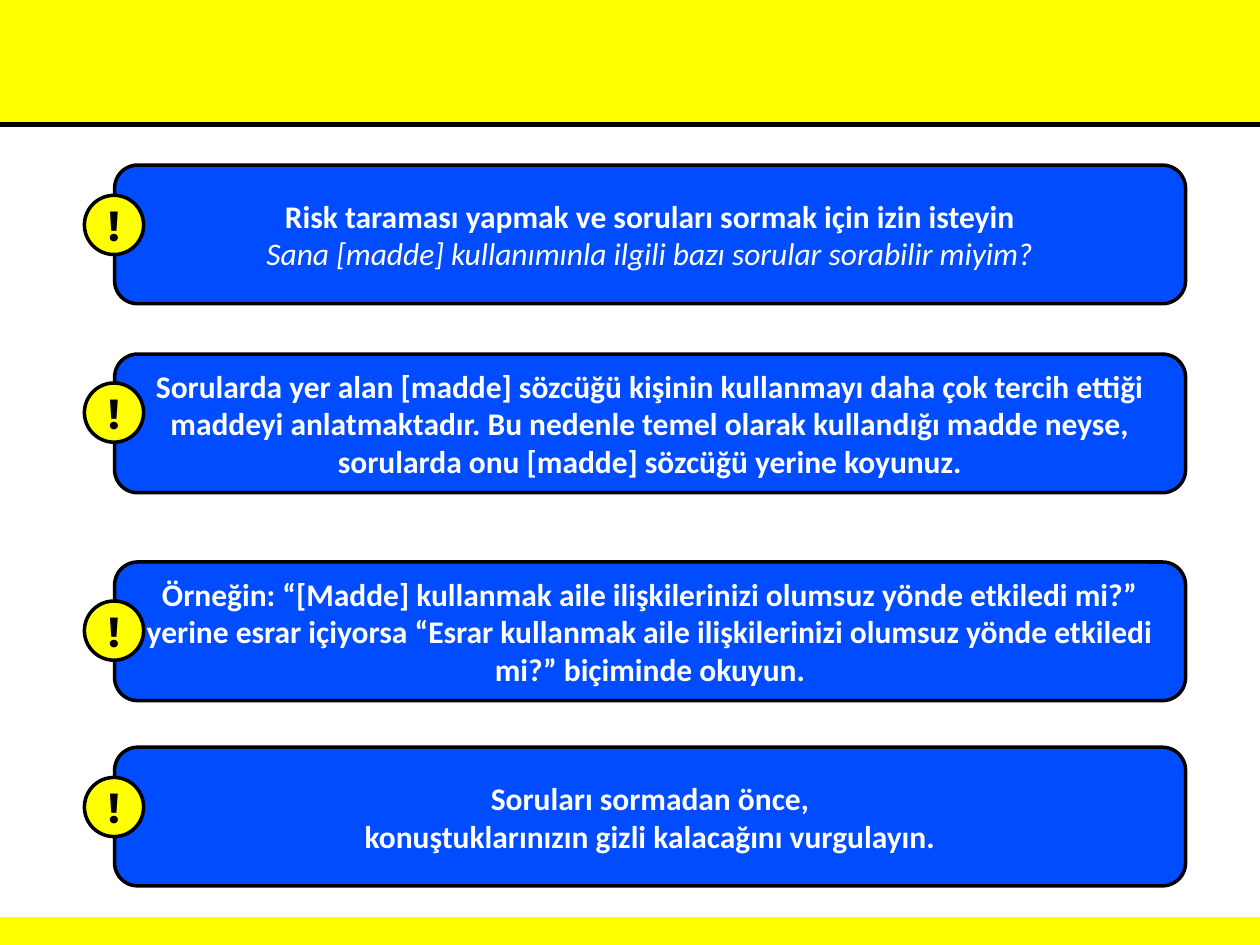
from dataclasses import dataclass

from lxml.etree import SubElement
from pptx import Presentation
from pptx.dml.color import RGBColor
from pptx.enum.shapes import MSO_CONNECTOR, MSO_SHAPE
from pptx.enum.text import MSO_ANCHOR, PP_ALIGN
from pptx.oxml.ns import qn
from pptx.shapes.autoshape import Shape
from pptx.slide import Slide
from pptx.util import Inches, Pt

WIDTH, HEIGHT = Inches(10), Inches(7.5)
COLORS = {"yellow": "FFFF00", "blue": "014CFF", "black": "000000", "white": "FFFFFF"}


@dataclass(frozen=True)
class Box:
    left: float
    top: float
    width: float
    height: float


@dataclass(frozen=True)
class Line:
    text: str
    bold: bool = True
    italic: bool = False


@dataclass(frozen=True)
class TextStyle:
    font: str
    size: int
    color: str


@dataclass(frozen=True)
class Card:
    top: float
    badge_top: float
    lines: tuple[Line, ...]


CARD_STYLE = TextStyle("Calibri", 18, "white")
BADGE_STYLE = TextStyle("Montserrat", 24, "black")
BANDS = (Box(0, 0, 100, 13.2), Box(0, 97.2, 100, 2.8))
CARDS = (
    Card(17.47, 20.67, (
        Line("Risk taraması yapmak ve soruları sormak için izin isteyin"),
        Line("Sana [madde] kullanımınla ilgili bazı sorular sorabilir miyim?", False, True),
    )),
    Card(37.47, 40.53, (
        Line("Sorularda yer alan [madde] sözcüğü kişinin kullanmayı daha çok tercih ettiği "
             "maddeyi anlatmaktadır. Bu nedenle temel olarak kullandığı madde neyse, "
             "sorularda onu [madde] sözcüğü yerine koyunuz."),
    )),
    Card(59.47, 63.6, (
        Line("Örneğin: “[Madde] kullanmak aile ilişkilerinizi olumsuz yönde etkiledi mi?” "
             "yerine esrar içiyorsa “Esrar kullanmak aile ilişkilerinizi olumsuz yönde "
             "etkiledi mi?” biçiminde okuyun."),
    )),
    Card(79.07, 82.27, (
        Line("Soruları sormadan önce,"),
        Line("konuştuklarınızın gizli kalacağını vurgulayın."),
    )),
)


def rgb(name: str) -> RGBColor:
    """Return the named colour."""
    return RGBColor.from_string(COLORS[name])


def across(percent: float) -> int:
    """Return a share of the slide width."""
    return round(WIDTH * percent / 100)


def down(percent: float) -> int:
    """Return a share of the slide height."""
    return round(HEIGHT * percent / 100)


def add_box(s: Slide, kind: MSO_SHAPE, box: Box, fill: str, line: str) -> Shape:
    """Draw a filled and outlined shape."""
    sp = s.shapes.add_shape(
        kind, across(box.left), down(box.top), across(box.width), down(box.height)
    )
    sp.shadow.inherit = False
    sp.fill.solid()
    sp.fill.fore_color.rgb = rgb(fill)
    sp.line.color.rgb = rgb(line)
    sp.line.width = Pt(2)
    return sp


def write(sp: Shape, lines: tuple[Line, ...], style: TextStyle) -> None:
    """Write centred paragraphs into a shape."""
    tf = sp.text_frame
    tf.word_wrap = True
    tf.vertical_anchor = MSO_ANCHOR.MIDDLE
    for i, line in enumerate(lines):
        p = tf.add_paragraph() if i else tf.paragraphs[0]
        p.alignment = PP_ALIGN.CENTER
        r = p.add_run()
        r.text = line.text
        r.font.name = style.font
        r.font.size = Pt(style.size)
        r.font.bold = line.bold
        r.font.italic = line.italic
        r.font.color.rgb = rgb(style.color)


def add_rule(s: Slide, top: float) -> None:
    """Draw a black rule across the slide."""
    rule = s.shapes.add_connector(MSO_CONNECTOR.STRAIGHT, 0, down(top), WIDTH, down(top))
    rule.line.color.rgb = rgb("black")
    rule.line.width = Pt(3)
    SubElement(rule._element.spPr, qn("a:effectLst"))


def add_card(s: Slide, card: Card) -> None:
    """Draw a card with its exclamation badge."""
    panel = Box(9.1, card.top, 85, 14.67)
    sp = add_box(s, MSO_SHAPE.ROUNDED_RECTANGLE, panel, "blue", "black")
    write(sp, card.lines, CARD_STYLE)
    badge = Box(6.7, card.badge_top, 4.7, 6.27)
    sp = add_box(s, MSO_SHAPE.OVAL, badge, "yellow", "black")
    write(sp, (Line("!"),), BADGE_STYLE)


def main() -> None:
    """Build and save the slide."""
    prs = Presentation()
    prs.slide_width, prs.slide_height = WIDTH, HEIGHT
    s = prs.slides.add_slide(prs.slide_layouts[6])
    for band in BANDS:
        add_box(s, MSO_SHAPE.RECTANGLE, band, "yellow", "yellow")
    add_rule(s, BANDS[0].height)
    for card in CARDS:
        add_card(s, card)
    prs.save("out.pptx")


if __name__ == "__main__":
    main()
